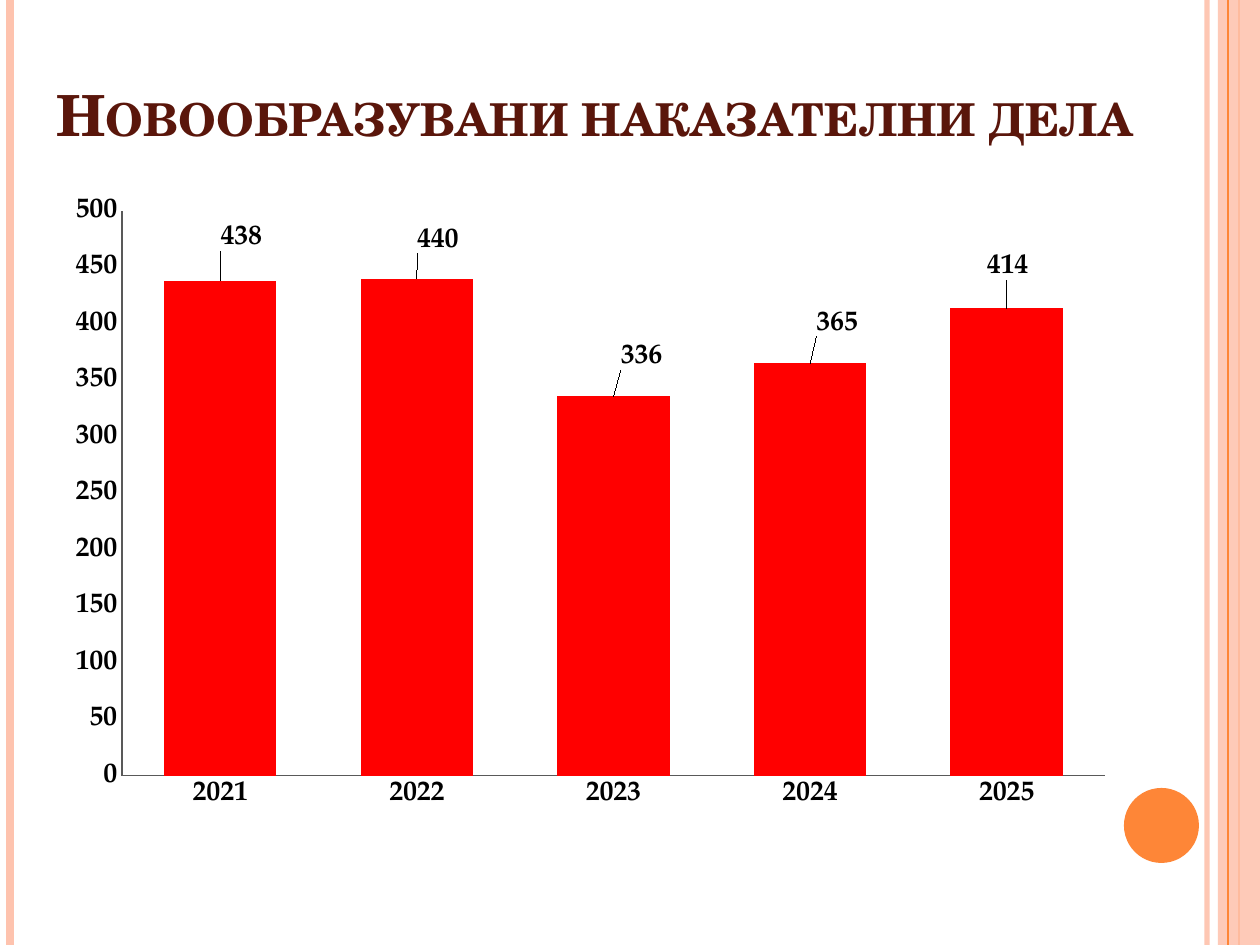
import lxml.etree
import pptx
import pptx.chart.data
import pptx.dml.color
import pptx.enum.chart
import pptx.enum.shapes
import pptx.enum.text
import pptx.oxml
import pptx.oxml.ns
import pptx.util

PX = 914400 / 126
WIDTH, HEIGHT = 1260, 945
rgb = pptx.dml.color.RGBColor.from_string
qn = pptx.oxml.ns.qn

theme = {
    "pink": rgb("FEC3AE"),
    "orange": rgb("FE8637"),
    "title": rgb("5A160B"),
    "bar": rgb("FF0000"),
    "axis": rgb("595959"),
    "text": rgb("000000"),
    "title_font": "TeX Gyre Schola",
    "chart_font": "TeX Gyre Pagella",
    "title_size": pptx.util.Pt(32.4),
    "chart_size": pptx.util.Pt(16),
}


def px(*lengths):
    return [round(length * PX) for length in lengths]


def set_alpha(shape, percent):
    color = shape._element.spPr.find(".//" + qn("a:srgbClr"))
    lxml.etree.SubElement(color, qn("a:alpha")).set("val", str(percent * 1000))


prs = pptx.Presentation()
prs.slide_width, prs.slide_height = px(WIDTH, HEIGHT)
slide = prs.slides.add_slide(prs.slide_layouts[6])
shapes = slide.shapes

stripes = [
    (1207, "pink", 3, 93),
    (10, "pink", 4.5, 100),
    (1239, "orange", 1.5, 100),
    (1228, "orange", 0.75, 100),
]
band_box = (1218, 0, 42, HEIGHT)
for x, color, weight, opacity in stripes:
    if x == 1228:
        band = shapes.add_shape(pptx.enum.shapes.MSO_SHAPE.RECTANGLE, *px(*band_box))
        band.shadow.inherit = False
        band.fill.solid()
        band.fill.fore_color.rgb = theme["pink"]
        band.line.fill.background()
        set_alpha(band, 87)
    stripe = shapes.add_connector(
        pptx.enum.shapes.MSO_CONNECTOR.STRAIGHT, *px(x, 0, x, HEIGHT))
    stripe.line.color.rgb = theme[color]
    stripe.line.width = pptx.util.Pt(weight)
    if opacity < 100:
        set_alpha(stripe, opacity)
    lxml.etree.SubElement(stripe._element.spPr, qn("a:effectLst"))

dot = shapes.add_shape(pptx.enum.shapes.MSO_SHAPE.OVAL, *px(1124, 788, 75, 75))
dot.shadow.inherit = False
dot.fill.solid()
dot.fill.fore_color.rgb = theme["orange"]
dot.line.fill.background()

title = shapes.add_textbox(*px(44, 76, 1134, 78)).text_frame
title.word_wrap = True
title.vertical_anchor = pptx.enum.text.MSO_ANCHOR.BOTTOM
heading = title.paragraphs[0]
heading_run = heading.add_run()
heading_run.text = "Новообразувани наказателни дела"
heading_run._r.get_or_add_rPr().set("cap", "small")
heading.font.name = theme["title_font"]
heading.font.size = theme["title_size"]
heading.font.bold = True
heading.font.color.rgb = theme["title"]

cases = pptx.chart.data.CategoryChartData()
cases.categories = ["2021", "2022", "2023", "2024", "2025"]
cases.add_series("Series 1", [438, 440, 336, 365, 414])
chart_width, chart_height = 1071, 635
chart = shapes.add_chart(
    pptx.enum.chart.XL_CHART_TYPE.COLUMN_CLUSTERED,
    *px(54, 185, chart_width, chart_height), cases).chart
chart.has_title = False
chart.has_legend = False
chart.font.name = theme["chart_font"]
chart.font.size = theme["chart_size"]
chart.font.bold = True
chart.font.color.rgb = theme["text"]

for axis in (chart.category_axis, chart.value_axis):
    axis.has_major_gridlines = False
    axis.major_tick_mark = pptx.enum.chart.XL_TICK_MARK.NONE
    axis.minor_tick_mark = pptx.enum.chart.XL_TICK_MARK.NONE
    axis.format.line.color.rgb = theme["axis"]
    axis.format.line.width = pptx.util.Pt(0.75)
chart.value_axis.minimum_scale = 0
chart.value_axis.maximum_scale = 500
chart.value_axis.major_unit = 50

plot = chart.plots[0]
plot.gap_width = 75
plot.vary_by_categories = False
bars = plot.series[0]
bars.format.fill.solid()
bars.format.fill.fore_color.rgb = theme["bar"]
bars.data_labels.show_value = True

label_shifts = [(21, -25), (21, -20), (28, -21), (27, -22), (1, -23)]
for index in range(len(label_shifts)):
    label = bars.points[index].data_label
    label.position = pptx.enum.chart.XL_LABEL_POSITION.OUTSIDE_END
    label.font.name = theme["chart_font"]
    label.font.size = theme["chart_size"]
    label.font.bold = True
    label.font.color.rgb = theme["text"]

layouts = [
    (label, 1, [("x", dx / chart_width), ("y", dy / chart_height)])
    for label, (dx, dy) in zip(bars._element.findall(".//" + qn("c:dLbl")), label_shifts)
]
plot_area = chart._chartSpace.find(".//" + qn("c:plotArea"))
for old_layout in plot_area.findall(qn("c:layout")):
    plot_area.remove(old_layout)
layouts.append((plot_area, 0, [
    ("layoutTarget", "inner"), ("xMode", "edge"), ("yMode", "edge"),
    ("x", 68 / chart_width), ("y", 26 / chart_height),
    ("w", 983 / chart_width), ("h", 565 / chart_height)]))
for owner, position, settings in layouts:
    layout = lxml.etree.Element(qn("c:layout"))
    manual = lxml.etree.SubElement(layout, qn("c:manualLayout"))
    for tag, value in settings:
        lxml.etree.SubElement(manual, qn("c:" + tag)).set("val", str(value))
    owner.insert(position, layout)

prs.save("out.pptx")
